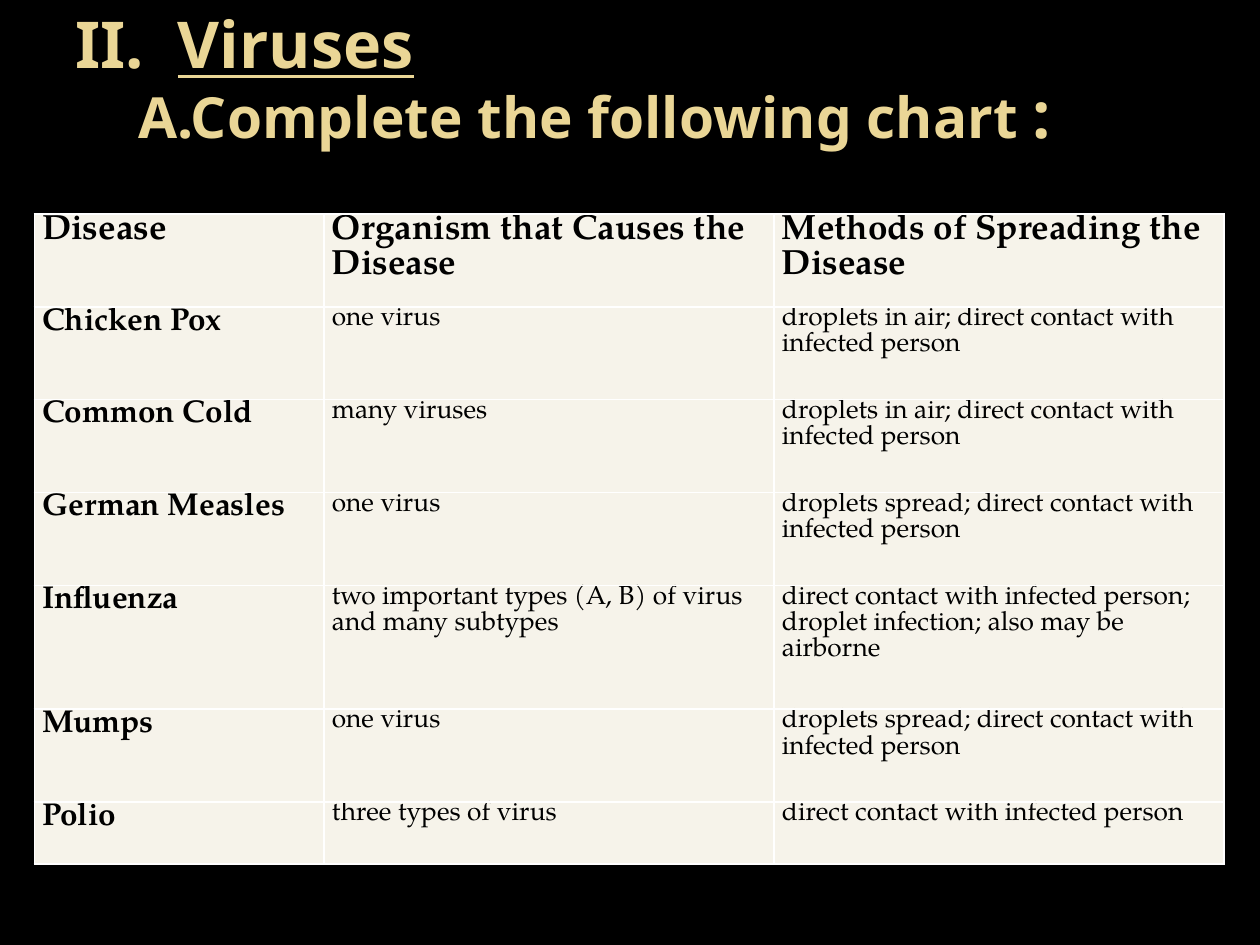
from copy import deepcopy

from lxml import etree
from pptx import Presentation
from pptx.dml.color import RGBColor
from pptx.enum import text
from pptx.oxml import ns
from pptx.util import Pt

BLACK = RGBColor(0x00, 0x00, 0x00)
GOLD = RGBColor(0xEA, 0xD6, 0x96)
CREAM = RGBColor(0xF6, 0xF3, 0xEA)
WHITE = RGBColor(0xFF, 0xFF, 0xFF)

TITLE_FONT = "Noto Sans"
TABLE_FONT = "TeX Gyre Pagella"
TITLE_SIZE = 36.9
SUBTITLE_SIZE = 32.4
HEADER_SIZE, DISEASE_SIZE, BODY_SIZE = 20, 18, 15

COLUMN_WIDTHS = [165.6, 257.2, 257.2]
ROW_HEIGHTS = [53.1, 53.1, 53.1, 53.1, 70.6, 53.1, 35.4]
DISEASES = [
    ("Disease", "Organism that Causes the Disease", "Methods of Spreading the Disease"),
    ("Chicken Pox", "one virus", "droplets in air; direct contact with infected person"),
    ("Common Cold", "many viruses", "droplets in air; direct contact with infected person"),
    ("German Measles", "one virus", "droplets spread; direct contact with infected person"),
    ("Influenza", "two important types (A, B) of virus and many subtypes",
     "direct contact with infected person; droplet infection; also may be airborne"),
    ("Mumps", "one virus", "droplets spread; direct contact with infected person"),
    ("Polio", "three types of virus", "direct contact with infected person"),
]


def add_span(para, words, font, size, color, bold=False, underline=False):
    span = para.add_run()
    span.text = words
    span.font.name = font
    span.font.size = Pt(size)
    span.font.color.rgb = color
    span.font.bold = bold
    span.font.underline = underline
    return span


def break_after(para, span):
    """Add a line break that keeps the format of the span before it."""
    para.add_line_break()
    para._p[-1].append(deepcopy(span.font._element))


def add_title(page):
    box = page.shapes.title
    box.left, box.top, box.width, box.height = Pt(36), Pt(21.6), Pt(648), Pt(90)
    frame = box.text_frame
    frame.word_wrap = True
    frame.auto_size = text.MSO_AUTO_SIZE.NONE
    frame.vertical_anchor = text.MSO_ANCHOR.MIDDLE
    para = frame.paragraphs[0]
    para.alignment = text.PP_ALIGN.LEFT
    para.line_spacing = 0.9

    def add_words(words, size=TITLE_SIZE, underline=False):
        return add_span(para, words, TITLE_FONT, size, GOLD, True, underline)

    add_words("II.  ")
    break_after(para, add_words("Viruses", underline=True))
    add_words("\t")
    add_words("A.Complete the following chart ", SUBTITLE_SIZE)
    break_after(para, add_words(":"))
    etree.SubElement(para._p, ns.qn("a:endParaRPr"), sz=str(round(SUBTITLE_SIZE * 100)))


def add_borders(cell):
    properties = cell._tc.get_or_add_tcPr()
    for position, side in enumerate(("lnL", "lnR", "lnT", "lnB")):
        line = etree.Element(ns.qn(f"a:{side}"), w=str(Pt(1)))
        fill = etree.SubElement(line, ns.qn("a:solidFill"))
        etree.SubElement(fill, ns.qn("a:srgbClr"), val=str(WHITE))
        properties.insert(position, line)


def fill_cell(cell, words, size, bold):
    cell.margin_left = cell.margin_right = Pt(4.5)
    cell.margin_top = cell.margin_bottom = 0
    cell.fill.solid()
    cell.fill.fore_color.rgb = CREAM
    add_borders(cell)
    para = cell.text_frame.paragraphs[0]
    para.line_spacing = Pt(size)
    add_span(para, words, TABLE_FONT, size, BLACK, bold)


def add_disease_table(page):
    table = page.shapes.add_table(
        len(DISEASES), len(COLUMN_WIDTHS), Pt(19.6), Pt(122.2),
        Pt(sum(COLUMN_WIDTHS)), Pt(sum(ROW_HEIGHTS))).table
    table.first_row = table.horz_banding = False
    for column, width in zip(table.columns, COLUMN_WIDTHS):
        column.width = Pt(width)
    for r, (height, entries) in enumerate(zip(ROW_HEIGHTS, DISEASES)):
        table.rows[r].height = Pt(height)
        for c, words in enumerate(entries):
            if r == 0:
                size = HEADER_SIZE
            else:
                size = DISEASE_SIZE if c == 0 else BODY_SIZE
            fill_cell(table.cell(r, c), words, size, bold=r == 0 or c == 0)


def main():
    deck = Presentation()
    deck.slide_width, deck.slide_height = Pt(720), Pt(540)
    page = deck.slides.add_slide(deck.slide_layouts[5])
    page.background.fill.solid()
    page.background.fill.fore_color.rgb = BLACK
    add_title(page)
    add_disease_table(page)
    deck.save("out.pptx")


if __name__ == "__main__":
    main()
